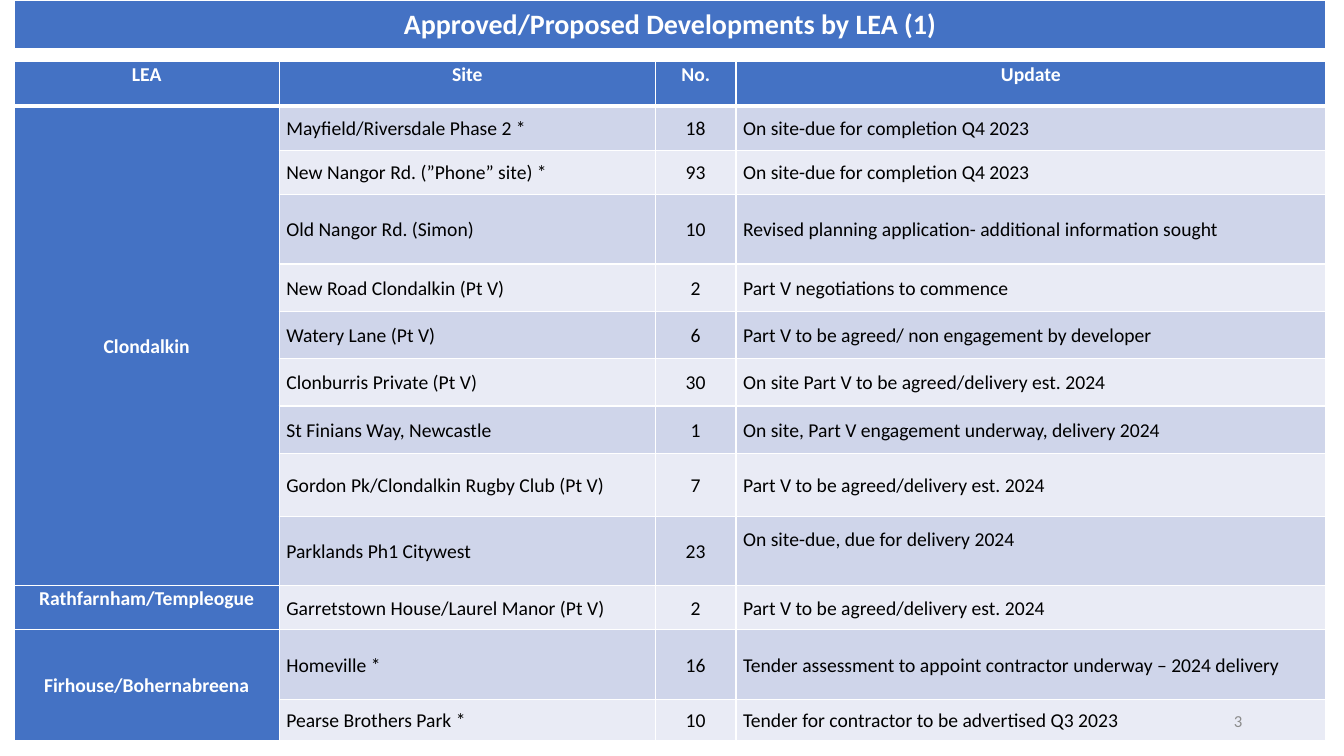
from dataclasses import dataclass

from lxml import etree
from pptx import Presentation
from pptx.dml.color import RGBColor
from pptx.enum.text import MSO_ANCHOR, PP_ALIGN
from pptx.oxml.ns import qn
from pptx.table import Table, _Cell
from pptx.text.text import TextFrame
from pptx.util import Inches, Pt

WHITE = RGBColor(0xFF, 0xFF, 0xFF)
BLACK = RGBColor(0x00, 0x00, 0x00)
BLUE = RGBColor(0x44, 0x72, 0xC4)
DARK_BAND = RGBColor(0xCF, 0xD5, 0xEA)
LIGHT_BAND = RGBColor(0xE9, 0xEB, 0xF5)
GREY = RGBColor(0x8C, 0x8C, 0x8C)

LEFT, CENTER, RIGHT = PP_ALIGN.LEFT, PP_ALIGN.CENTER, PP_ALIGN.RIGHT
TOP, MIDDLE = MSO_ANCHOR.TOP, MSO_ANCHOR.MIDDLE

FONT = "Calibri"
TABLE_LEFT = 0.14
COLUMN_WIDTHS = [2.63, 3.73, 0.8, 5.85]
HEADER_HEIGHT = 0.44
HEADINGS = ["LEA", "Site", "No.", "Update"]


@dataclass
class Site:
    name: str
    homes: int
    update: str
    height: float
    lift: float = 0  # bottom margin that raises the update text


@dataclass
class Area:
    name: str
    sites: list[Site]
    anchor: MSO_ANCHOR = MIDDLE


AREAS = [
    Area("Clondalkin", [
        Site("Mayfield/Riversdale Phase 2 *", 18, "On site-due for completion Q4 2023", 0.44),
        Site("New Nangor Rd. (”Phone” site) *", 93, "On site-due for completion Q4 2023", 0.44),
        Site("Old Nangor Rd. (Simon)", 10,
             "Revised planning application- additional information sought", 0.69),
        Site("New Road Clondalkin (Pt V)", 2, "Part V negotiations to commence", 0.47),
        Site("Watery Lane (Pt V)", 6, "Part V to be agreed/ non engagement by developer", 0.47),
        Site("Clonburris Private (Pt V)", 30, "On site Part V to be agreed/delivery est. 2024", 0.47),
        Site("St Finians Way, Newcastle", 1,
             "On site, Part V engagement underway, delivery 2024", 0.47),
        Site("Gordon Pk/Clondalkin Rugby Club (Pt V)", 7,
             "Part V to be agreed/delivery est. 2024", 0.63),
        Site("Parklands Ph1 Citywest", 23, "On site-due, due for delivery 2024", 0.68, lift=0.25),
    ]),
    Area("Rathfarnham/Templeogue", [
        Site("Garretstown House/Laurel Manor (Pt V)", 2,
             "Part V to be agreed/delivery est. 2024", 0.44),
    ], anchor=TOP),
    Area("Firhouse/Bohernabreena", [
        Site("Homeville *", 16,
             "Tender assessment to appoint contractor underway – 2024 delivery", 0.69),
        Site("Pearse Brothers Park *", 10, "Tender for contractor to be advertised Q3 2023", 0.41),
    ]),
]


def write_text(frame: TextFrame, text: str, *, size: float = 14, color: RGBColor = BLACK,
               bold: bool = False, align: PP_ALIGN = LEFT, spacing: float = 1.07) -> None:
    paragraph = frame.paragraphs[0]
    paragraph.alignment = align
    paragraph.line_spacing = spacing
    run = paragraph.add_run()
    run.text = text
    run.font.name = FONT
    run.font.size = Pt(size)
    run.font.bold = bold
    run.font.color.rgb = color


def style_cell(cell: _Cell, fill: RGBColor, *, anchor: MSO_ANCHOR = MIDDLE, side: float = 0.07,
               top: float = 0, bottom: float = 0, bottom_line: float = 1) -> None:
    cell.margin_left = cell.margin_right = Inches(side)
    cell.margin_top, cell.margin_bottom = Inches(top), Inches(bottom)
    cell.vertical_anchor = anchor
    properties = cell._tc.get_or_add_tcPr()
    for edge, width in (("L", 1), ("R", 1), ("T", 1), ("B", bottom_line)):
        line = etree.SubElement(properties, qn(f"a:ln{edge}"), w=str(Pt(width)))
        solid = etree.SubElement(line, qn("a:solidFill"))
        etree.SubElement(solid, qn("a:srgbClr"), val=str(WHITE))
    cell.fill.solid()
    cell.fill.fore_color.rgb = fill


def add_plain_table(slide, top: float, widths: list[float], heights: list[float]) -> Table:
    table = slide.shapes.add_table(
        len(heights), len(widths), Inches(TABLE_LEFT), Inches(top),
        Inches(sum(widths)), Inches(sum(heights))).table
    table.first_row = table.horz_banding = False
    for column, width in zip(table.columns, widths):
        column.width = Inches(width)
    for row, height in zip(table.rows, heights):
        row.height = Inches(height)
    return table


def add_developments(slide) -> None:
    heights = [HEADER_HEIGHT] + [site.height for area in AREAS for site in area.sites]
    table = add_plain_table(slide, 0.61, COLUMN_WIDTHS, heights)

    for column, heading in enumerate(HEADINGS):
        cell = table.cell(0, column)
        style_cell(cell, BLUE, anchor=TOP, bottom_line=3)
        write_text(cell.text_frame, heading, color=WHITE, bold=True, align=CENTER)

    row = 1
    for area in AREAS:
        first_row = row
        for site in area.sites:
            band = DARK_BAND if row % 2 else LIGHT_BAND
            style_cell(table.cell(row, 0), BLUE, anchor=area.anchor)
            values = [(site.name, LEFT, 0), (str(site.homes), CENTER, 0),
                      (site.update, LEFT, site.lift)]
            for column, (text, align, lift) in enumerate(values, start=1):
                cell = table.cell(row, column)
                style_cell(cell, band, bottom=lift)
                write_text(cell.text_frame, text, align=align)
            row += 1
        area_cell = table.cell(first_row, 0)
        if len(area.sites) > 1:
            area_cell.merge(table.cell(row - 1, 0))
        write_text(area_cell.text_frame, area.name, color=WHITE, bold=True, align=CENTER)


def add_title_bar(slide) -> None:
    cell = add_plain_table(slide, 0, [sum(COLUMN_WIDTHS)], [0.49]).cell(0, 0)
    style_cell(cell, BLUE, side=0.14, top=0.07, bottom=0.07, bottom_line=3)
    write_text(cell.text_frame, "Approved/Proposed Developments by LEA (1)",
               size=20, color=WHITE, bold=True, align=CENTER, spacing=1.0)


def add_page_number(slide) -> None:
    frame = slide.shapes.add_textbox(Inches(9.42), Inches(6.95), Inches(3), Inches(0.4)).text_frame
    frame.word_wrap = True
    frame.vertical_anchor = MIDDLE
    write_text(frame, "3", size=12, color=GREY, align=RIGHT, spacing=1.0)


def main() -> None:
    presentation = Presentation()
    presentation.slide_width, presentation.slide_height = Inches(13.33), Inches(7.5)
    slide = presentation.slides.add_slide(presentation.slide_layouts[6])
    add_developments(slide)
    add_title_bar(slide)
    add_page_number(slide)
    presentation.save("out.pptx")


if __name__ == "__main__":
    main()
